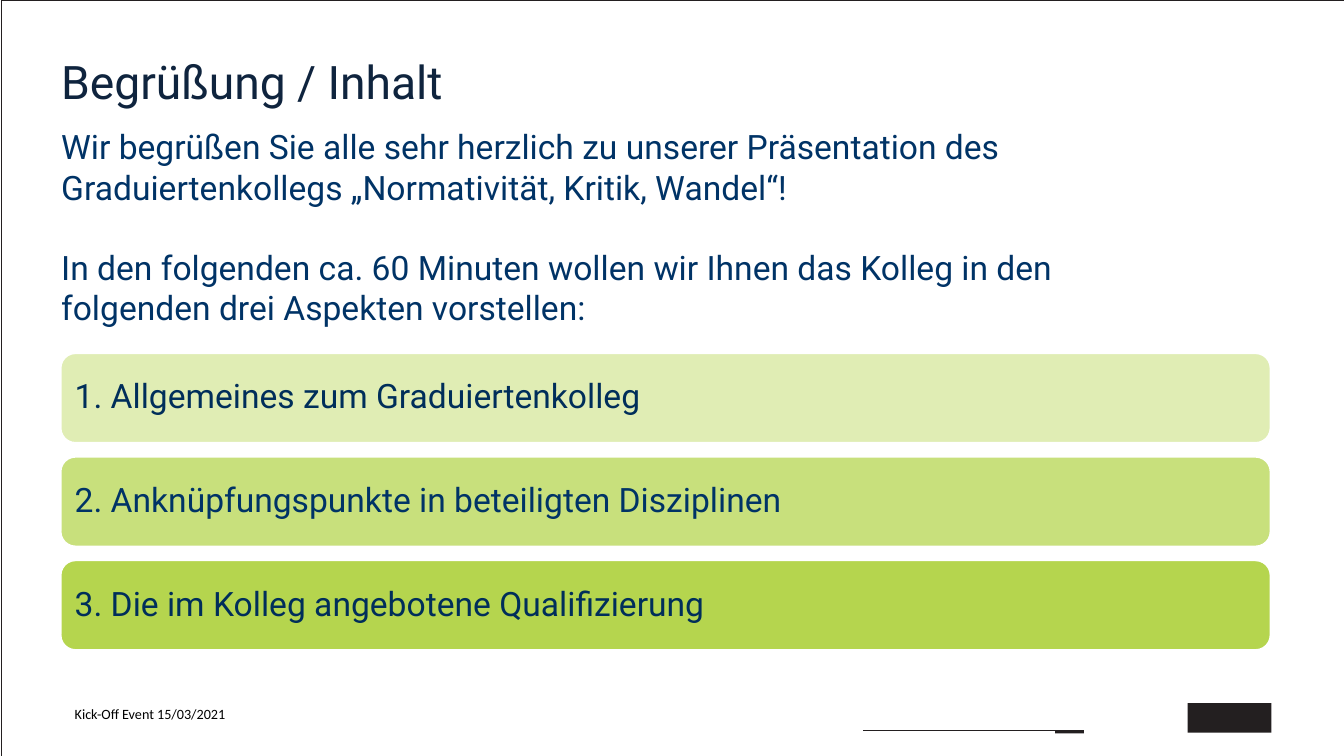
from pptx import Presentation
from pptx import util as u
from pptx.dml.color import RGBColor
from pptx.enum import shapes, text
from pptx.oxml.ns import qn
from lxml import etree

INK = RGBColor(0x23, 0x1F, 0x20)
BLACK = RGBColor(0, 0, 0)
TITLE = RGBColor(0x0F, 0x24, 0x3E)
BLUE = RGBColor(0x00, 0x33, 0x66)
NAVY = RGBColor(0x00, 0x2E, 0x5A)
GREEN = RGBColor(0xB2, 0xD3, 0x45)
WHITE = RGBColor(0xFF, 0xFF, 0xFF)

TOPICS = [
    ("1. Allgemeines zum Graduiertenkolleg", 40, NAVY),
    ("2. Anknüpfungspunkte in beteiligten Disziplinen", 70, BLUE),
    ("3. Die im Kolleg angebotene Qualifizierung", 95, NAVY),
]


def inches(*vals):
    return [u.Inches(v) for v in vals]


def write(par, words, size, color, font="Roboto"):
    run = par.add_run()
    run.text = words
    run.font.name = font
    run.font.size = u.Pt(size)
    run.font.color.rgb = color


def pad(frame, side, top):
    frame.margin_left = frame.margin_right = u.Inches(side)
    frame.margin_top = frame.margin_bottom = u.Inches(top)


def add_text(slide, at, lines, size, color, font="Roboto", ins=(0, 0), gap=0):
    frame = slide.shapes.add_textbox(*inches(*at)).text_frame
    frame.word_wrap = True
    pad(frame, *ins)
    for i, words in enumerate(lines):
        par = frame.add_paragraph() if i else frame.paragraphs[0]
        if i:
            par.space_before = u.Pt(gap)
        write(par, words, size, color, font)


def add_box(slide, kind, at, fill=None, line=None, width=1):
    box = slide.shapes.add_shape(kind, *inches(*at))
    box.shadow.inherit = False
    if fill is None:
        box.fill.background()
    else:
        box.fill.solid()
        box.fill.fore_color.rgb = fill
    if line is None:
        box.line.fill.background()
    else:
        box.line.color.rgb = line
        box.line.width = u.Pt(width)
    return box


def add_rule(slide, left, right, y):
    rule = slide.shapes.add_connector(
        shapes.MSO_CONNECTOR.STRAIGHT, *inches(left, y, right, y))
    rule.line.color.rgb = INK
    rule.line.width = u.Pt(0.25)
    etree.SubElement(rule._element.spPr, qn("a:effectLst"))


def add_topic(slide, top, words, alpha, color):
    box = add_box(slide, shapes.MSO_SHAPE.ROUNDED_RECTANGLE,
                  (0.8, top, 16.01, 1.19), GREEN, WHITE, 2)
    # Let the background show through the fill
    tone = box._element.spPr.find(qn("a:solidFill"))[0]
    etree.SubElement(tone, qn("a:alpha"), val=str(alpha * 1000))
    frame = box.text_frame
    frame.word_wrap = True
    frame.vertical_anchor = text.MSO_ANCHOR.MIDDLE
    pad(frame, 0.13, 0.13)
    par = frame.paragraphs[0]
    par.alignment = text.PP_ALIGN.LEFT
    par.line_spacing = 0.9
    write(par, words, 32, color)


def main():
    prs = Presentation()
    prs.slide_width, prs.slide_height = inches(17.78, 10)
    slide = prs.slides.add_slide(prs.slide_layouts[6])
    rect = shapes.MSO_SHAPE.RECTANGLE

    # Page frame
    add_box(slide, rect, (0.02, 0, 17.77, 10), line=INK, width=0.75)

    # Footer: rule with end bar, plain block for the logo, event
    add_rule(slide, 11.42, 14.34, 9.66)
    add_box(slide, rect, (13.96, 9.66, 0.38, 0.04), INK)
    add_box(slide, rect, (15.71, 9.3, 1.11, 0.39), INK)
    add_text(slide, (0.89, 9.28, 2.37, 0.33), ["Kick-Off Event 15/03/2021"],
             13.5, BLACK, "Calibri", (0.1, 0.05))

    # Title and welcome
    add_text(slide, (0.81, 0.7, 16.01, 0.74), ["Begrüßung / Inhalt"], 44, TITLE)
    add_text(slide, (0.81, 1.67, 15, 2.8), [
        "Wir begrüßen Sie alle sehr herzlich zu unserer Präsentation des "
        "Graduiertenkollegs „Normativität, Kritik, Wandel“!",
        "In den folgenden ca. 60 Minuten wollen wir Ihnen das Kolleg in den "
        "folgenden drei Aspekten vorstellen:",
    ], 32, BLUE, gap=38)

    # Topics
    for i, topic in enumerate(TOPICS):
        add_topic(slide, 4.67 + 1.37 * i, *topic)

    prs.save("out.pptx")


if __name__ == "__main__":
    main()
